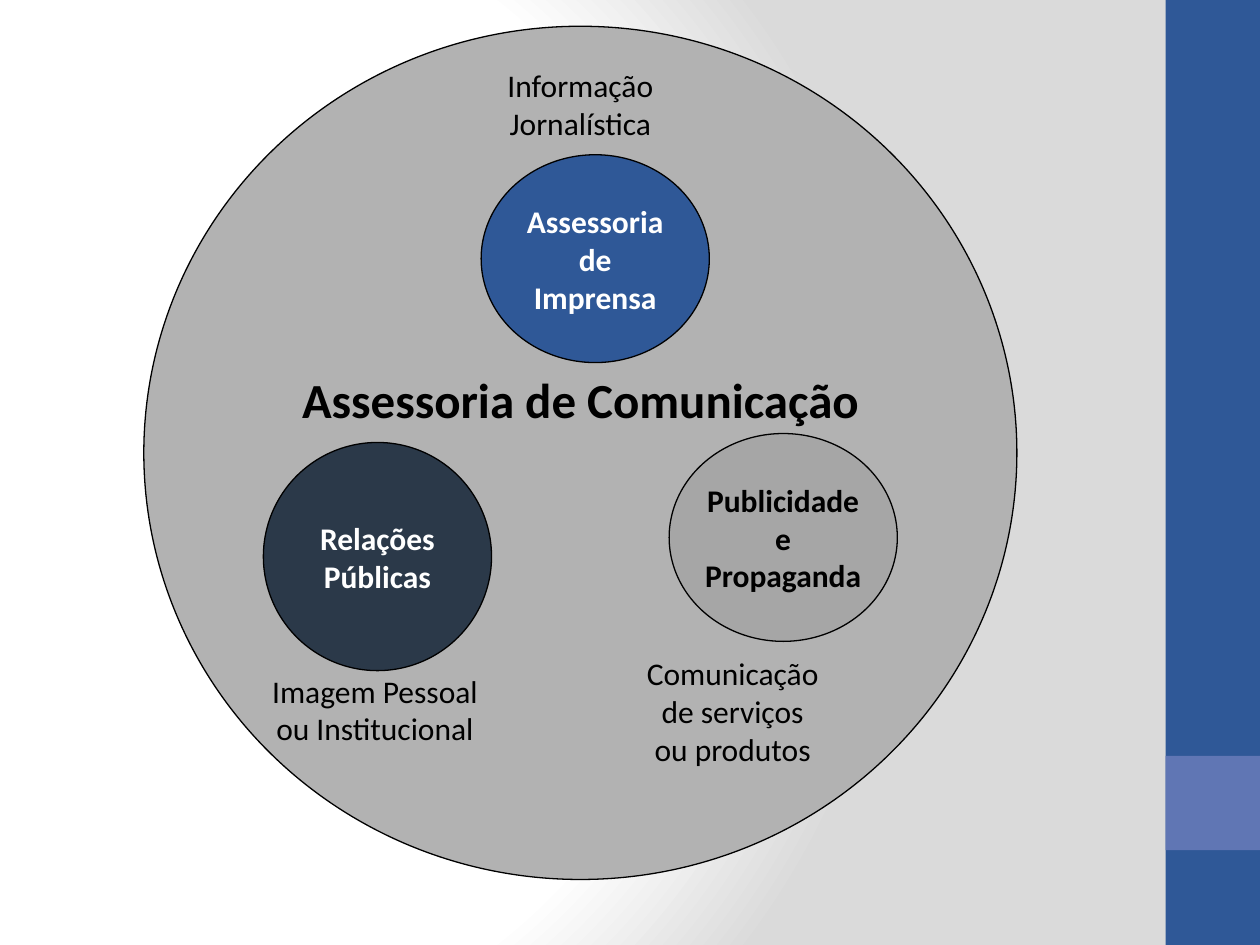
from dataclasses import dataclass

from pptx import Presentation
from pptx.dml.color import RGBColor
from pptx.enum.shapes import MSO_SHAPE
from pptx.enum.text import MSO_ANCHOR, MSO_AUTO_SIZE, PP_ALIGN
from pptx.oxml import parse_xml
from pptx.oxml.ns import nsdecls
from pptx.util import Cm, Pt

OVAL, RECTANGLE = MSO_SHAPE.OVAL, MSO_SHAPE.RECTANGLE
MIDDLE, CENTER, NO_AUTOFIT = MSO_ANCHOR.MIDDLE, PP_ALIGN.CENTER, MSO_AUTO_SIZE.NONE


@dataclass(frozen=True)
class Theme:
    font: str = "Calibri"
    body_size: int = 18
    title_size: int = 28
    line_width: float = 0.75
    black: str = "000000"
    white: str = "FFFFFF"
    blue: str = "2F5897"
    violet: str = "6076B4"
    navy: str = "2B3949"
    light_gray: str = "B2B2B2"
    mid_gray: str = "A6A6A6"
    backdrop_gray: str = "DADADA"


def write_text(frame, text, *, font, size, color, bold=False, wrap=False):
    """Fill a text frame with centred text, one paragraph per line."""
    frame.text = text
    frame.auto_size = NO_AUTOFIT
    frame.word_wrap = wrap
    frame.vertical_anchor = MIDDLE
    for para in frame.paragraphs:
        para.alignment = CENTER
        para.line_spacing = 1.0
        for span in para.runs:
            span.font.name = font
            span.font.size = Pt(size)
            span.font.bold = bold
            span.font.color.rgb = RGBColor.from_string(color)


class SlideBuilder:
    def __init__(self, page, theme):
        self.page = page
        self.theme = theme

    def backdrop(self):
        """Set a circular gradient that stays white until near its edge."""
        self.page.background.fill.gradient()
        stops = ((0, self.theme.white), (75, self.theme.white), (100, self.theme.backdrop_gray))
        stop_xml = "".join(
            f'<a:gs pos="{percent * 1000}"><a:srgbClr val="{color}"/></a:gs>'
            for percent, color in stops
        )
        gradient = parse_xml(
            f'<a:gradFill {nsdecls("a")} rotWithShape="1"><a:gsLst>{stop_xml}</a:gsLst>'
            '<a:path path="circle">'
            '<a:fillToRect l="20000" t="50000" r="100000" b="50000"/>'
            "</a:path></a:gradFill>"
        )
        default = self.page.element.xpath(".//p:bg//a:gradFill")[0]
        default.getparent().replace(default, gradient)

    def shape(self, kind, left, top, width, height, fill):
        box = self.page.shapes.add_shape(kind, Cm(left), Cm(top), Cm(width), Cm(height))
        box.shadow.inherit = False
        box.fill.solid()
        box.fill.fore_color.rgb = RGBColor.from_string(fill)
        box.line.fill.background()
        return box

    def circle(self, left, top, width, height, fill, text="", color=None):
        box = self.shape(OVAL, left, top, width, height, fill)
        box.line.color.rgb = RGBColor.from_string(self.theme.black)
        box.line.width = Pt(self.theme.line_width)
        if text:
            write_text(box.text_frame, text, font=self.theme.font,
                       size=self.theme.body_size, color=color, bold=True)

    def caption(self, center_x, center_y, text, width=5, height=3):
        box = self.page.shapes.add_textbox(
            Cm(center_x - width / 2), Cm(center_y - height / 2), Cm(width), Cm(height))
        write_text(box.text_frame, text, font=self.theme.font,
                   size=self.theme.body_size, color=self.theme.black, wrap=True)

    def title(self, center_x, center_y, text, width=14, height=1.4):
        box = self.page.shapes.title
        box.left, box.top = Cm(center_x - width / 2), Cm(center_y - height / 2)
        box.width, box.height = Cm(width), Cm(height)
        write_text(box.text_frame, text, font=self.theme.font,
                   size=self.theme.title_size, color=self.theme.black, bold=True, wrap=True)
        # Bring the title in front of the large circle.
        box.element.getparent().append(box.element)


def main():
    theme = Theme()
    deck = Presentation()
    deck.slide_width, deck.slide_height = Cm(25.4), Cm(19.05)
    title_only = deck.slide_layouts[5]
    builder = SlideBuilder(deck.slides.add_slide(title_only), theme)

    builder.backdrop()
    builder.shape(RECTANGLE, 23.5, 0, 1.9, 19.05, theme.blue)
    builder.shape(RECTANGLE, 23.5, 15.24, 1.9, 1.9, theme.violet)

    builder.circle(2.9, 0.53, 17.6, 17.2, theme.light_gray)
    builder.title(11.7, 8.05, "Assessoria de Comunicação")

    builder.circle(5.31, 8.92, 4.6, 4.6, theme.navy, "Relações\nPúblicas", theme.white)
    builder.circle(13.49, 8.74, 4.6, 4.19, theme.mid_gray,
                   "Publicidade\ne\nPropaganda", theme.black)
    builder.circle(9.7, 3.12, 4.6, 4.19, theme.blue,
                   "Assessoria\nde\nImprensa", theme.white)

    builder.caption(11.7, 2.1, "Informação\nJornalística")
    builder.caption(7.56, 14.3, "Imagem Pessoal\vou Institucional")
    builder.caption(14.77, 14.33, "Comunicação\nde serviços\nou produtos")

    deck.save("out.pptx")


if __name__ == "__main__":
    main()
